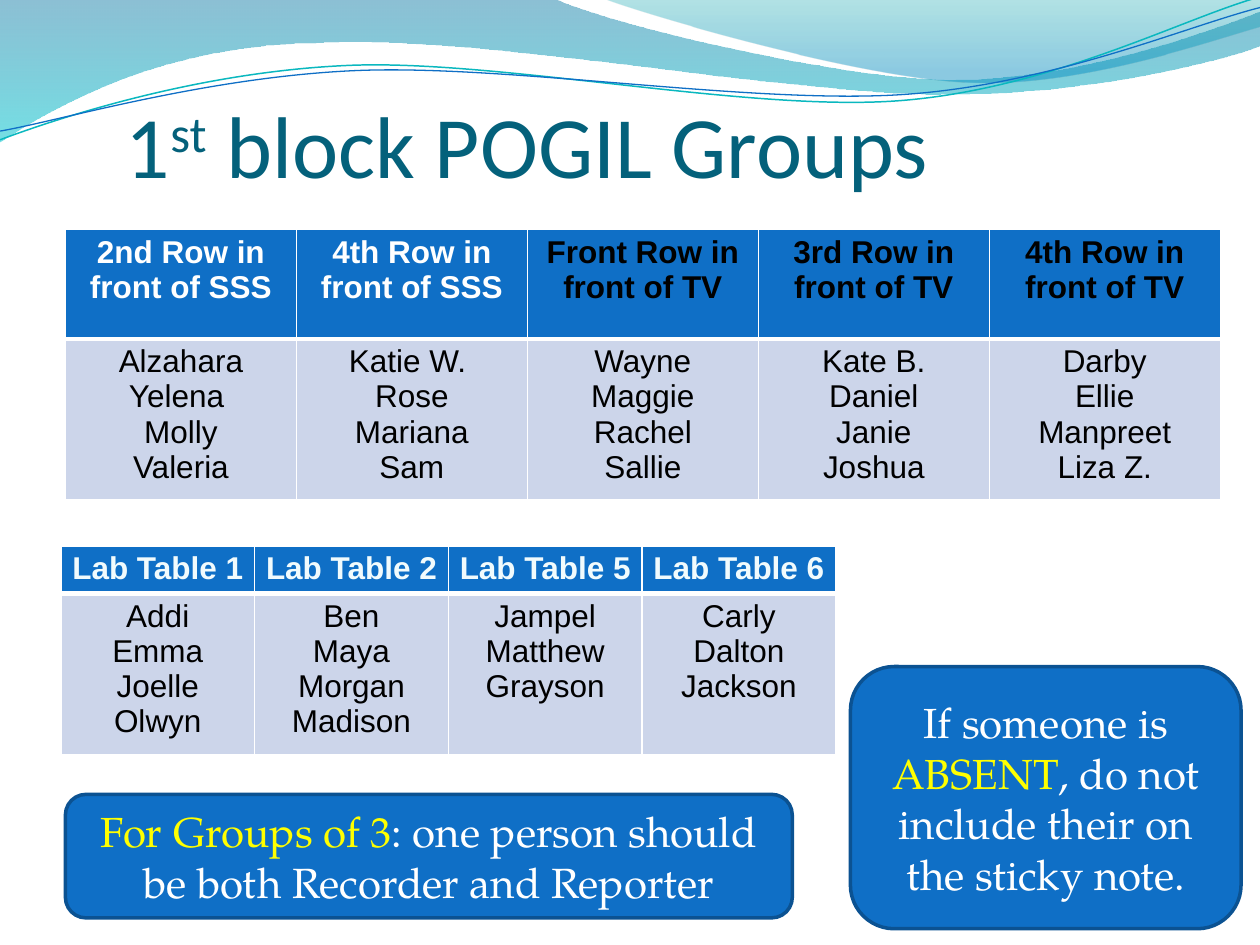
import pptx
import pptx.dml.color
import pptx.enum.shapes
import pptx.enum.text
import pptx.oxml.ns
import pptx.util
from lxml import etree

Pt = pptx.util.Pt
RGB = pptx.dml.color.RGBColor.from_string
qn = pptx.oxml.ns.qn
MID = pptx.enum.text.PP_ALIGN.CENTER

theme = {
    "title": ("Calibri", 50, "04617B"),
    "cell": ("Arial", 18),
    "note": ("TeX Gyre Pagella", 24),
    "blue": "0F6FC6", "edge": "0B5292", "pale": "CCD5EA", "teal": "0AB8BF",
    "white": "FFFFFF", "mist": "F1FBFD", "black": "000000", "gold": "FFFF00",
}


def style(run, face, size, color, bold=False):
    run.font.name = face
    run.font.size = Pt(size)
    run.font.color.rgb = RGB(color)
    run.font.bold = bold


def draw(start, parts, close):
    points = [(Pt(part[i]), Pt(part[i + 1]))
              for part in parts for i in range(0, len(part), 2)]
    form = shapes.build_freeform(Pt(start[0]), Pt(start[1]))
    form.add_line_segments(points, close=close)
    wave = form.convert_to_shape()
    lines = iter(list(wave.element.spPr.iter(qn("a:lnTo"))))
    for part in parts:
        first = next(lines)
        if len(part) == 6:
            first.tag = qn("a:cubicBezTo")
            for spot in (next(lines), next(lines)):
                first.append(spot[0])
                spot.getparent().remove(spot)
    wave.shadow.inherit = False
    return wave


deck = pptx.Presentation()
deck.slide_width, deck.slide_height = Pt(720), Pt(540)
slide = deck.slides.add_slide(deck.slide_layouts[6])
shapes = slide.shapes

bands = [
    ((0, -0.7), [
        (316.8, -0.7), (342.7, 12.2, 478.1, 45.4, 545.8, 45.4),
        (614.2, 45.4, 689.8, 18.7, 720, 6.5), (720.7, 25.9),
        (707.8, 31.7, 626.4, 54.7, 537.1, 54), (447.8, 54, 275, 20.2, 185, 24.5),
        (92.9, 25.2, 33.1, 59.8, -0.7, 81.4), (0, -0.7)],
     [(0, "0074A1", 45), (1, "00C6CF", 55)]),
    ((344.9, -0.7), [
        (366.5, 7.9, 491, 44.6, 553.7, 46.8),
        (616.3, 49.7, 691.9, 23, 720, 15.1), (720, 0), (344.9, -0.7)],
     [(0, "00A1A9", 30), (0.8, "008BBF", 45)]),
]
for start, parts, stops in bands:
    band = draw(start, parts, True)
    band.line.fill.background()
    band.fill.gradient()
    band.fill.gradient_angle = 270
    for stop, (place, color, alpha) in zip(band.fill.gradient_stops, stops):
        stop.position = place
        stop.color.rgb = RGB(color)
    tints = list(band.element.spPr.iter(qn("a:srgbClr")))
    for tint, (place, color, alpha) in zip(tints, stops):
        etree.SubElement(tint, qn("a:alpha"), val=str(alpha * 1000))

curves = [
    ((0, 79.9), [
        (34.6, 67, 113.8, 41, 199.4, 37.4), (284.4, 33.8, 427, 64.1, 513.4, 57.6),
        (599.8, 51.1, 675.4, 10.8, 718.6, -1.4)], "teal", 0.85),
    ((0, 74.9), [
        (33.8, 69.1, 118.1, 43.9, 203.8, 40.3), (290.2, 36.7, 429.8, 59.8, 516.2, 54),
        (601.9, 48.2, 677.5, 15.1, 720, 4.3)], "blue", 0.75),
]
for start, parts, color, width in curves:
    curve = draw(start, parts, False)
    curve.fill.background()
    curve.line.color.rgb = RGB(theme[color])
    curve.line.width = Pt(width)

frame = shapes.add_textbox(Pt(72), Pt(22.2), Pt(648), Pt(90)).text_frame
frame.word_wrap = True
frame.vertical_anchor = pptx.enum.text.MSO_ANCHOR.BOTTOM
frame.margin_left = frame.margin_right = frame.margin_bottom = 0
frame.margin_top = Pt(3.6)
for text in ("1", "st", " block POGIL Groups"):
    run = frame.paragraphs[0].add_run()
    run.text = text
    style(run, *theme["title"])
    if text == "st":
        run.font._element.set("baseline", "30000")

tables = [
    (37.4, 131.2, 132, (62.6, 69.8), [
        ("2nd Row in front of SSS", "white", "Alzahara\nYelena \nMolly\nValeria"),
        ("4th Row in front of SSS", "white", "Katie W. \nRose\nMariana\nSam"),
        ("Front Row in front of TV", "black", "Wayne\nMaggie\nRachel\nSallie"),
        ("3rd Row in front of TV", "black", "Kate B.\nDaniel\nJanie\nJoshua"),
        ("4th Row in front of TV", "black", "Darby\nEllie\nManpreet\nLiza Z.")]),
    (34.8, 312, 110.7, (21.6, 69.8), [
        ("Lab Table 1", "mist", "Addi\nEmma\nJoelle\nOlwyn"),
        ("Lab Table 2", "mist", "Ben\nMaya\nMorgan\nMadison"),
        ("Lab Table 5", "mist", "Jampel\nMatthew\nGrayson"),
        ("Lab Table 6", "mist", "Carly\nDalton\nJackson")]),
]
for left, top, width, heights, groups in tables:
    table = shapes.add_table(2, len(groups), Pt(left), Pt(top),
                             Pt(width * len(groups)), Pt(sum(heights))).table
    for row, height in zip(table.rows, heights):
        row.height = Pt(height)
    for col, (head, ink, names) in enumerate(groups):
        table.columns[col].width = Pt(width)
        looks = [(head, ink, "blue", True, "B"), (names, "black", "pale", False, "T")]
        for row, (text, color, back, bold, thick) in enumerate(looks):
            cell = table.cell(row, col)
            cell.margin_left = cell.margin_right = Pt(5)
            cell.margin_top = cell.margin_bottom = Pt(2.8)
            cell.text_frame.text = text
            for para in cell.text_frame.paragraphs:
                para.alignment = MID
                style(para.runs[0], *theme["cell"], theme[color], bold)
            props = cell._tc.get_or_add_tcPr()
            for side in "LRTB":
                rule = etree.SubElement(props, qn("a:ln" + side),
                                        w=str(Pt(3 if side == thick else 1)))
                solid = etree.SubElement(rule, qn("a:solidFill"))
                etree.SubElement(solid, qn("a:srgbClr"), val=theme["white"])
            cell.fill.solid()
            cell.fill.fore_color.rgb = RGB(theme[back])

notes = [
    ((486, 380.9, 223.2, 149.8), [
        ("If someone is ", "white"), ("ABSENT", "gold"),
        (", do not include their on the sticky note.", "white")]),
    ((37.4, 453.9, 415.4, 70.6), [
        ("For Groups of 3", "gold"),
        (": one person should be both Recorder and Reporter", "white")]),
]
for box, texts in notes:
    note = shapes.add_shape(pptx.enum.shapes.MSO_SHAPE.ROUNDED_RECTANGLE, *map(Pt, box))
    note.shadow.inherit = False
    note.fill.solid()
    note.fill.fore_color.rgb = RGB(theme["blue"])
    note.line.color.rgb = RGB(theme["edge"])
    note.line.width = Pt(2)
    frame = note.text_frame
    frame.word_wrap = True
    frame.vertical_anchor = pptx.enum.text.MSO_ANCHOR.MIDDLE
    frame.margin_left = frame.margin_right = Pt(5)
    frame.margin_top = frame.margin_bottom = Pt(2.5)
    para = frame.paragraphs[0]
    para.alignment = MID
    for text, color in texts:
        run = para.add_run()
        run.text = text
        style(run, *theme["note"], theme[color])

deck.save("out.pptx")
